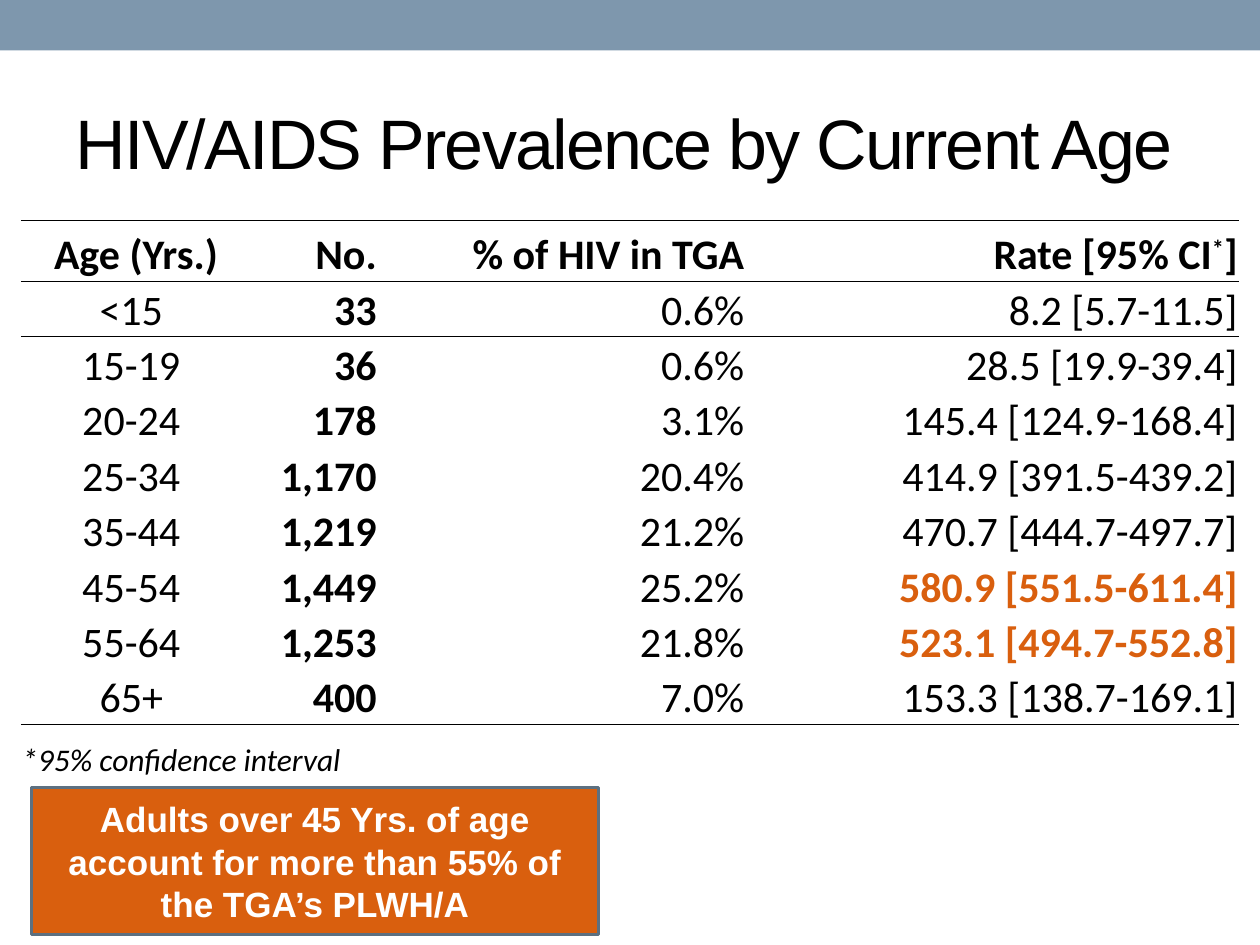
import pptx
import pptx.util
import pptx.dml.color
import pptx.enum.shapes
import pptx.enum.text
import pptx.oxml
import pptx.oxml.ns

ALIGN = pptx.enum.text.PP_ALIGN
ANCHOR = pptx.enum.text.MSO_ANCHOR
BLACK, WHITE, ORANGE = "000000", "FFFFFF", "D95F0E"
GRID = pptx.util.Inches(1 / 12)  # 120 columns by 90 rows


def color(value):
    return pptx.dml.color.RGBColor.from_string(value)


def add_run(paragraph, text, font_color=BLACK, **font_format):
    run = paragraph.add_run()
    run.text = text
    run.font.color.rgb = color(font_color)
    for name, value in font_format.items():
        setattr(run.font, name, value)
    return run


presentation = pptx.Presentation()
presentation.slide_width = 120 * GRID
presentation.slide_height = 90 * GRID
slide = presentation.slides.add_slide(presentation.slide_layouts[5])

# Top band and callout: left, top, width, height in grid units
band, callout = [
    slide.shapes.add_shape(
        pptx.enum.shapes.MSO_SHAPE.RECTANGLE, *[round(part * GRID) for part in place])
    for place in [(0, 0, 120, 4.8), (3, 75, 54, 14)]
]
for shape, fill_color in [(band, "7E97AD"), (callout, ORANGE)]:
    shape.shadow.inherit = False
    shape.fill.solid()
    shape.fill.fore_color.rgb = color(fill_color)
band.line.fill.background()
callout.line.color.rgb = color("5D7080")
callout.line.width = pptx.util.Pt(2.08)
callout.text_frame.word_wrap = True
callout.text_frame.vertical_anchor = ANCHOR.MIDDLE
paragraph = callout.text_frame.paragraphs[0]
paragraph.alignment = ALIGN.CENTER
add_run(paragraph, "Adults over 45 Yrs. of age account for more than 55% of the TGA’s PLWH/A",
        WHITE, name="Arial", size=pptx.util.Pt(20), bold=True)

# Title
title = slide.shapes.title
placement = {"left": 6, "top": 7, "width": 108, "height": 13}
for name, value in placement.items():
    setattr(title, name, value * GRID)
title.text_frame.vertical_anchor = ANCHOR.MIDDLE
paragraph = title.text_frame.paragraphs[0]
paragraph.alignment = ALIGN.LEFT
run = add_run(paragraph, "HIV/AIDS Prevalence by Current Age",
              name="Arial", size=pptx.util.Pt(40))
run.font._element.set("spc", "-100")

# Table content: a cell is a text or a list of (text, baseline) parts
rows = [
    [" Age (Yrs.)", "No.", "% of HIV in TGA", [("Rate [95% CI", 0), ("*", 30000), ("]", 0)]],
    ["<15", "33", "0.6%", "8.2 [5.7-11.5]"],
    ["15-19", "36", "0.6%", "28.5 [19.9-39.4]"],
    ["20-24", "178", "3.1%", "145.4 [124.9-168.4]"],
    ["25-34", "1,170", "20.4%", "414.9 [391.5-439.2]"],
    ["35-44", "1,219", "21.2%", "470.7 [444.7-497.7]"],
    ["45-54", "1,449", "25.2%", "580.9 [551.5-611.4]"],
    ["55-64", "1,253", "21.8%", "523.1 [494.7-552.8]"],
    ["65+", "400", "7.0%", "153.3 [138.7-169.1]"],
    ["*95% confidence interval", "", "", ""],
]
footnote_row = len(rows) - 1
highlighted_rows = {6, 7}
column_widths = [21, 13, 35, 47]
row_heights = [0.48] + [0.44] * footnote_row
row_borders = {  # row: line widths in points by side
    0: {"lnT": 0.5, "lnB": 0.5},
    1: {"lnT": 0.5},
    footnote_row - 1: {"lnB": 1},
    footnote_row: {"lnT": 1},
}
cell_format = {
    "margin_left": pptx.util.Inches(0.01),
    "margin_right": pptx.util.Inches(0.01),
    "margin_top": pptx.util.Inches(0.01),
    "margin_bottom": 0,
    "vertical_anchor": ANCHOR.BOTTOM,
}

# Table without a style, so that only the drawn rules show
table = slide.shapes.add_table(
    len(rows), len(column_widths), 2 * GRID, 21 * GRID,
    sum(column_widths) * GRID, pptx.util.Inches(sum(row_heights))).table
table.first_row = table.horz_banding = False
table._tbl.tblPr.find(pptx.oxml.ns.qn("a:tableStyleId")).text = (
    "{2D5ABB26-0587-4C30-8999-92F81FD0307C}")
for column, width in zip(table.columns, column_widths):
    column.width = width * GRID
for row, height in zip(table.rows, row_heights):
    row.height = pptx.util.Inches(height)
table.cell(footnote_row, 0).merge(table.cell(footnote_row, 3))

for row_index, row in enumerate(rows):
    for column_index, content in enumerate(row):
        cell = table.cell(row_index, column_index)
        for name, value in cell_format.items():
            setattr(cell, name, value)
        cell.fill.background()

        # Horizontal rules, placed ahead of the fill
        properties = cell._tc.get_or_add_tcPr()
        for position, (side, points) in enumerate(row_borders.get(row_index, {}).items()):
            properties.insert(position, pptx.oxml.parse_xml(
                f'<a:{side} {pptx.oxml.ns.nsdecls("a")} w="{pptx.util.Pt(points)}">'
                f'<a:solidFill><a:srgbClr val="{BLACK}"/></a:solidFill></a:{side}>'))

        if not content:
            continue
        is_footnote = row_index == footnote_row
        is_highlighted = row_index in highlighted_rows and column_index == 3
        paragraph = cell.text_frame.paragraphs[0]
        if is_footnote:
            paragraph.alignment = ALIGN.LEFT
        else:
            paragraph.alignment = ALIGN.RIGHT if column_index else ALIGN.CENTER
        parts = [(content, 0)] if isinstance(content, str) else content
        for text, baseline in parts:
            run = add_run(
                paragraph, text, ORANGE if is_highlighted else BLACK, name="Calibri",
                size=pptx.util.Pt(18 if is_footnote else 24), italic=is_footnote,
                bold=row_index == 0 or column_index == 1 or is_highlighted)
            if baseline:
                run.font._element.set("baseline", str(baseline))

presentation.save("out.pptx")
